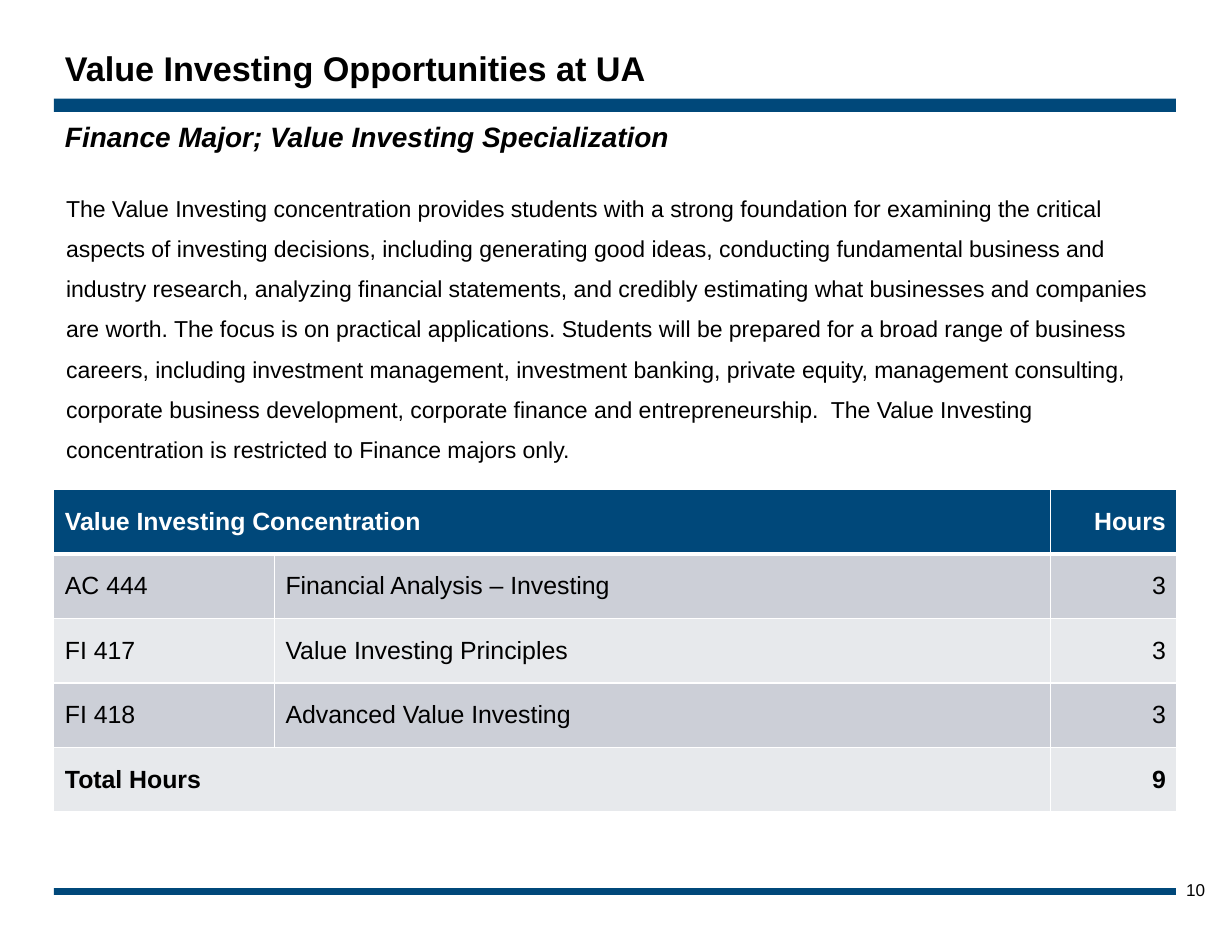
from dataclasses import dataclass

from lxml.etree import SubElement
from pptx import Presentation
from pptx.dml.color import RGBColor
from pptx.enum.shapes import MSO_SHAPE
from pptx.enum.text import MSO_ANCHOR, MSO_AUTO_SIZE, PP_ALIGN
from pptx.oxml.ns import qn
from pptx.util import Inches, Pt


@dataclass(frozen=True)
class Theme:
    """Colours, font and type sizes of the slide."""
    font: str = "Arial"
    navy: str = "00487A"
    black: str = "000000"
    white: str = "FFFFFF"
    bands: tuple = ("CCCFD7", "E7E9EC")
    title: float = 22
    subtitle: float = 18
    body: float = 14.8
    table: float = 16
    number: float = 11


THEME = Theme()
LEFT, WIDTH = 0.48, 10.02
COLUMNS = (1.97, 6.93, 1.13)
TABLE_HEIGHT = 2.88
ROWS = (
    ("Value Investing Concentration", "", "Hours"),
    ("AC 444", "Financial Analysis – Investing", "3"),
    ("FI 417", "Value Investing Principles", "3"),
    ("FI 418", "Advanced Value Investing", "3"),
    ("Total Hours", "", "9"),
)
DESCRIPTION = (
    "The Value Investing concentration provides students with a strong foundation "
    "for examining the critical aspects of investing decisions, including generating "
    "good ideas, conducting fundamental business and industry research, analyzing "
    "financial statements, and credibly estimating what businesses and companies are "
    "worth. The focus is on practical applications. Students will be prepared for a "
    "broad range of business careers, including investment management, investment "
    "banking, private equity, management consulting, corporate business development, "
    "corporate finance and entrepreneurship.  The Value Investing concentration is "
    "restricted to Finance majors only."
)


def add_run(p, text, size, color=THEME.black, bold=False, italic=False):
    """Add one formatted run to a paragraph."""
    r = p.add_run()
    r.text = text
    r.font.name, r.font.size = THEME.font, Pt(size)
    r.font.bold, r.font.italic = bold, italic
    r.font.color.rgb = RGBColor.from_string(color)


def fill_text(sp, box, text, size, top=0.06, spacing=1.0, anchor=MSO_ANCHOR.TOP, **style):
    """Place a text shape and write its single left-aligned paragraph."""
    sp.left, sp.top, sp.width, sp.height = map(Inches, box)
    tf = sp.text_frame
    tf.word_wrap, tf.auto_size = True, MSO_AUTO_SIZE.NONE
    tf.vertical_anchor = anchor
    tf.margin_left = tf.margin_right = Inches(0.11)
    tf.margin_top, tf.margin_bottom = Inches(top), Inches(0.06)
    p = tf.paragraphs[0]
    p.alignment, p.line_spacing, p.space_before = PP_ALIGN.LEFT, spacing, Pt(0)
    pPr = p._p.get_or_add_pPr()
    pPr.set("marL", "0")
    pPr.set("indent", "0")
    SubElement(pPr, qn("a:buNone"))
    add_run(p, text, size, **style)


def add_bar(s, top, height):
    """Draw a full-width navy bar."""
    sp = s.shapes.add_shape(MSO_SHAPE.RECTANGLE, *map(Inches, (LEFT, top, WIDTH, height)))
    sp.shadow.inherit = False
    sp.fill.solid()
    sp.fill.fore_color.rgb = RGBColor.from_string(THEME.navy)
    sp.line.fill.background()


def set_borders(cell, top=1, bottom=1):
    """Give a cell white borders, with widths in points."""
    tcPr = cell._tc.get_or_add_tcPr()
    for side, width in (("L", 1), ("R", 1), ("T", top), ("B", bottom)):
        ln = SubElement(tcPr, qn(f"a:ln{side}"), w=str(Pt(width)))
        fill = SubElement(ln, qn("a:solidFill"))
        SubElement(fill, qn("a:srgbClr"), val=THEME.white)


def add_course_table(s):
    """Add the table of courses and credit hours."""
    box = map(Inches, (LEFT, 4.37, sum(COLUMNS), TABLE_HEIGHT))
    table = s.shapes.add_table(len(ROWS), len(COLUMNS), *box).table
    for column, width in zip(table.columns, COLUMNS):
        column.width = Inches(width)
    for i, row in enumerate(ROWS):
        header = i == 0
        fill = THEME.navy if header else THEME.bands[(i - 1) % 2]
        color = THEME.white if header else THEME.black
        for j, text in enumerate(row):
            cell = table.cell(i, j)
            set_borders(cell, top=3 if i == 1 else 1, bottom=3 if header else 1)
            cell.fill.solid()
            cell.fill.fore_color.rgb = RGBColor.from_string(fill)
            cell.vertical_anchor = MSO_ANCHOR.MIDDLE
            p = cell.text_frame.paragraphs[0]
            p.alignment = PP_ALIGN.RIGHT if j == 2 else PP_ALIGN.LEFT
            if text:
                add_run(p, text, THEME.table, color, bold=not row[1])
        if not row[1]:
            table.cell(i, 0).merge(table.cell(i, 1))


def main():
    """Build the slide and save it."""
    prs = Presentation()
    prs.slide_width, prs.slide_height = Inches(11), Inches(8.5)
    s = prs.slides.add_slide(prs.slide_layouts[3])
    title, body, subtitle = s.placeholders
    add_bar(s, 0.88, 0.12)
    add_bar(s, 7.93, 0.06)
    number = s.shapes.add_textbox(0, 0, 0, 0)
    fill_text(number, (10.48, 7.79, 0.5, 0.31), "10", THEME.number)
    add_course_table(s)
    fill_text(title, (0.47, 0.28, 9.9, 0.57), "Value Investing Opportunities at UA",
              THEME.title, anchor=MSO_ANCHOR.BOTTOM, bold=True)
    fill_text(body, (LEFT, 1.56, 10.03, 2.57), DESCRIPTION, THEME.body, spacing=1.46)
    fill_text(subtitle, (0.47, 0.9, 10.01, 0.51),
              "Finance Major; Value Investing Specialization",
              THEME.subtitle, top=0.17, bold=True, italic=True)
    prs.save("out.pptx")


if __name__ == "__main__":
    main()
